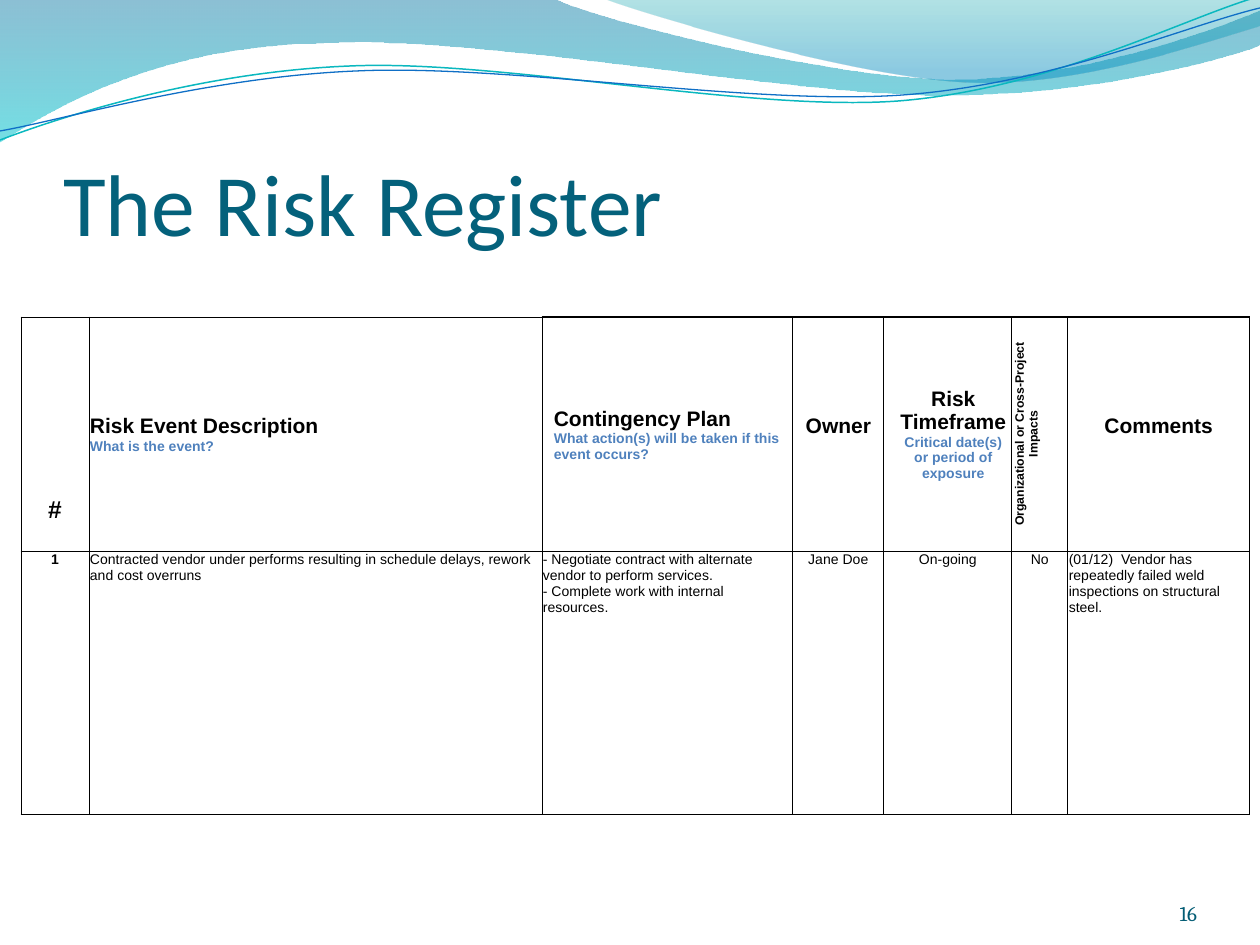
import copy
import pptx
import pptx.util
import pptx.dml.color
import pptx.enum.text
import pptx.oxml.ns
from dataclasses import dataclass
from lxml import etree

PX = 914400 / 126
ALIGN = pptx.enum.text.PP_ALIGN
ANCHOR = pptx.enum.text.MSO_ANCHOR


@dataclass(frozen=True)
class Theme:
    title: str = "04617B"
    number: str = "045D75"
    ink: str = "000000"
    hint: str = "4F81BD"
    title_size: int = 50
    number_size: int = 12
    symbol_size: int = 14
    heading_size: int = 12
    body_size: int = 8
    small_size: int = 7
    thin: float = 0.5
    thick: float = 1


THEME = Theme()

TITLE = ("The Risk Register", (63, 96, 1134, 158))
NUMBER = ("16", (1092, 876, 105, 50))

TABLE_AT = (21, 317)
ROW_HEIGHTS = (154, 264)
COLUMN_WIDTHS = (68, 453, 251, 91, 128, 56, 182)
HEADERS = [
    dict(lines=["#"], sizes=[THEME.symbol_size], align=ALIGN.CENTER, anchor=ANCHOR.BOTTOM, bottom=27),
    dict(lines=["Risk Event Description", "What is the event?"]),
    dict(lines=["Contingency Plan", "What action(s) will be taken if this event occurs?"], left=12),
    dict(lines=["Owner"], align=ALIGN.CENTER, bottom=17),
    dict(lines=["Risk Timeframe", "Critical date(s) or period of exposure"], align=ALIGN.CENTER, left=12),
    dict(lines=["Organizational or Cross-Project Impacts"], sizes=[THEME.small_size],
         align=ALIGN.CENTER, vertical=True),
    dict(lines=["Comments"], align=ALIGN.CENTER, bottom=17),
]
RISK = [
    "1",
    "Contracted vendor under performs resulting in schedule delays, rework and cost overruns",
    "- Negotiate contract with alternate vendor to perform services.\n- Complete work with internal resources.",
    "Jane Doe",
    "On-going",
    "No",
    "(01/12)  Vendor has repeatedly failed weld inspections on structural steel.",
]
CENTERED_COLUMNS = {0, 3, 4, 5}
FIRST_THICK_COLUMN = 2

# Each path segment holds one point for a line or three for a Bézier curve.
BANDS = [
    ([[(0, 0)], [(554, -1)], [(600, 21), (837, 79), (955, 79)], [(1075, 79), (1207, 33), (1260, 11)],
      [(1261, 45)], [(1239, 55), (1096, 96), (940, 95)], [(784, 95), (481, 35), (324, 43)],
      [(163, 45), (58, 105), (-1, 142)]],
     [(0, "0074A1", 45), (1, "00C6CF", 55)]),
    ([[(604, -1)], [(641, 14), (859, 78), (969, 82)], [(1079, 87), (1211, 40), (1260, 26)], [(1260, 0)]],
     [(0, "00A1A9", 30), (0.8, "008BBF", 45)]),
]
STRANDS = [
    ([[(0, 140)], [(60, 117), (199, 72), (349, 66)], [(498, 59), (747, 112), (898, 101)],
      [(1050, 89), (1182, 19), (1257, -3)]], "0AB8BF", 0.85),
    ([[(0, 131)], [(59, 121), (207, 77), (357, 71)], [(508, 64), (752, 106), (903, 95)],
      [(1053, 84), (1185, 26), (1260, 8)]], "0F6FC6", 0.75),
]


def emu(px):
    return pptx.util.Emu(round(px * PX))


def rgb(color):
    return pptx.dml.color.RGBColor.from_string(color)


def add_xml(parent, tag, **attributes):
    return etree.SubElement(parent, pptx.oxml.ns.qn(tag), attributes)


def add_path(slide, segments, closed):
    points = [(emu(x), emu(y)) for segment in segments for x, y in segment]
    builder = slide.shapes.build_freeform(*points[0])
    builder.add_line_segments(points[1:], close=closed)
    shape = builder.convert_to_shape()
    shape.shadow.inherit = False
    lines = iter(list(shape.element.spPr.iter(pptx.oxml.ns.qn("a:lnTo"))))
    for segment in segments[1:]:
        first, *others = [next(lines) for point in segment]
        if others:
            curve = etree.Element(pptx.oxml.ns.qn("a:cubicBezTo"))
            first.addprevious(curve)
            for line in (first, *others):
                curve.append(line[0])
                line.getparent().remove(line)
    return shape


def add_waves(slide):
    for segments, stops in BANDS:
        shape = add_path(slide, segments, True)
        shape.line.fill.background()
        shape.fill.gradient()
        shape.fill.gradient_angle = 270
        for stop, (position, color, opacity) in zip(shape.fill.gradient_stops, stops):
            stop.position = position
            stop.color.rgb = rgb(color)
        colors = shape.element.spPr.iter(pptx.oxml.ns.qn("a:srgbClr"))
        for element, (position, color, opacity) in zip(list(colors), stops):
            add_xml(element, "a:alpha", val=str(opacity * 1000))
    for segments, color, width in STRANDS:
        shape = add_path(slide, segments, False)
        shape.fill.background()
        shape.line.color.rgb = rgb(color)
        shape.line.width = pptx.util.Pt(width)


def style(paragraph, font, sizes, colors, align=ALIGN.LEFT, bold=False):
    paragraph.alignment = align
    for run, size, color in zip(paragraph.runs, sizes, colors):
        run.font.name = font
        run.font.size = pptx.util.Pt(size)
        run.font.bold = bold
        run.font.color.rgb = rgb(color)
    for line_break in paragraph._p.findall(pptx.oxml.ns.qn("a:br")):
        line_break.append(copy.deepcopy(line_break.getprevious()[0]))


def fill_frame(shape, text, at, top, font, size, color, align):
    shape.left, shape.top, shape.width, shape.height = map(emu, at)
    frame = shape.text_frame
    frame.text = text
    frame.word_wrap = True
    frame.auto_size = pptx.enum.text.MSO_AUTO_SIZE.NONE
    frame.vertical_anchor = ANCHOR.BOTTOM
    frame.margin_left = frame.margin_right = frame.margin_bottom = 0
    frame.margin_top = emu(top)
    style(frame.paragraphs[0], font, [size], [color], align)


def format_cell(cell, thick_sides, left=1, bottom=0, anchor=ANCHOR.TOP, vertical=False):
    cell.margin_left, cell.margin_bottom = emu(left), emu(bottom)
    cell.margin_right = cell.margin_top = emu(1)
    cell.vertical_anchor = anchor
    properties = cell._tc.get_or_add_tcPr()
    if vertical:
        properties.set("vert", "vert270")
    for side in "LRTB":
        width = THEME.thick if side in thick_sides else THEME.thin
        line = add_xml(properties, f"a:ln{side}", w=str(pptx.util.Pt(width)))
        add_xml(add_xml(line, "a:solidFill"), "a:srgbClr", val=THEME.ink)
    cell.fill.background()


def add_register(slide):
    size = (sum(COLUMN_WIDTHS), sum(ROW_HEIGHTS))
    table = slide.shapes.add_table(2, len(HEADERS), *map(emu, TABLE_AT + size)).table
    table.first_row = table.horz_banding = False
    for row, height in zip(table.rows, ROW_HEIGHTS):
        row.height = emu(height)
    for index, (width, header, text) in enumerate(zip(COLUMN_WIDTHS, HEADERS, RISK)):
        table.columns[index].width = emu(width)
        right = "R" if index == len(HEADERS) - 1 else ""
        top = "T" if index >= FIRST_THICK_COLUMN else ""

        cell = table.cell(0, index)
        paragraph = cell.text_frame.paragraphs[0]
        paragraph.text = "\n".join(header["lines"])
        sizes = header.get("sizes", [THEME.heading_size, THEME.body_size])
        style(paragraph, "Arial", sizes, [THEME.ink, THEME.hint], header.get("align", ALIGN.LEFT), True)
        format_cell(cell, top + right, header.get("left", 1), header.get("bottom", 0),
                    header.get("anchor", ANCHOR.MIDDLE), header.get("vertical", False))

        cell = table.cell(1, index)
        paragraph = cell.text_frame.paragraphs[0]
        paragraph.text = text
        align = ALIGN.CENTER if index in CENTERED_COLUMNS else ALIGN.LEFT
        style(paragraph, "Arial", [THEME.body_size] * 2, [THEME.ink] * 2, align, index == 0)
        format_cell(cell, right)


def main():
    presentation = pptx.Presentation()
    presentation.slide_width, presentation.slide_height = emu(1260), emu(945)
    slide = presentation.slides.add_slide(presentation.slide_layouts[5])
    add_waves(slide)
    fill_frame(slide.shapes.title, *TITLE, 6, "Calibri", THEME.title_size, THEME.title, ALIGN.LEFT)
    number = slide.shapes.add_textbox(0, 0, 0, 0)
    fill_frame(number, *NUMBER, 0, "Cambria", THEME.number_size, THEME.number, ALIGN.RIGHT)
    add_register(slide)
    presentation.save("out.pptx")


if __name__ == "__main__":
    main()
